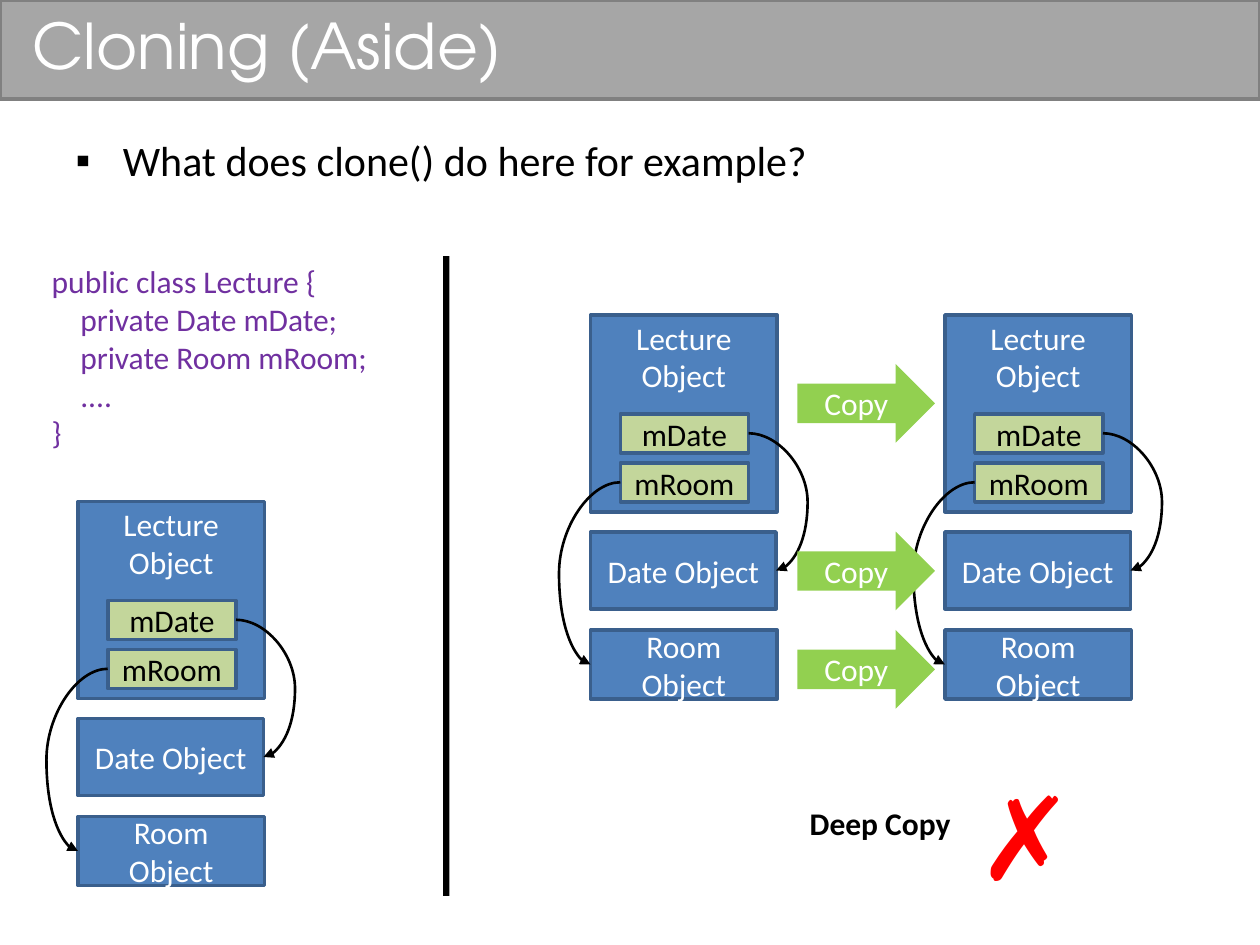
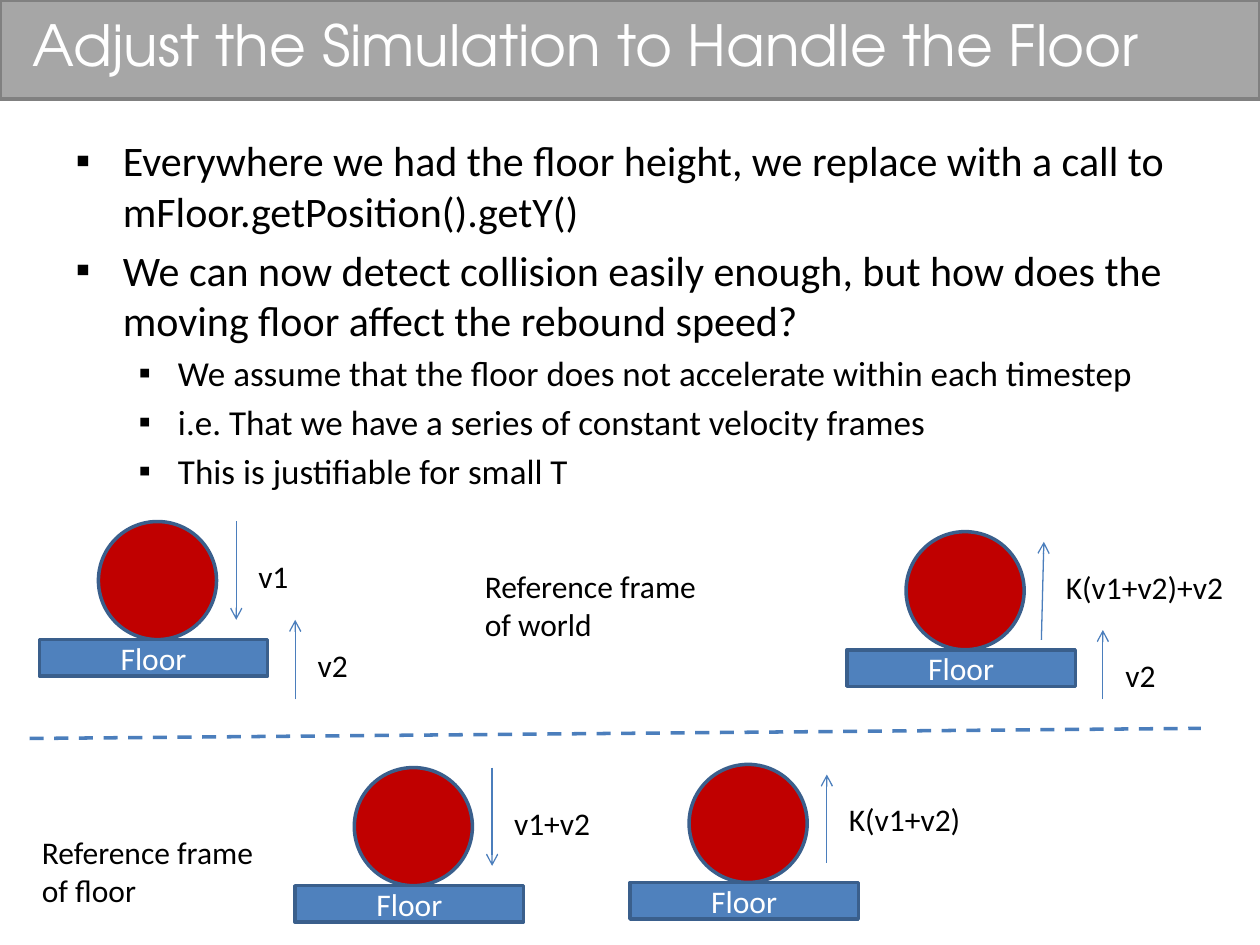
from lxml.etree import SubElement
from pptx import Presentation
from pptx.dml.color import RGBColor
from pptx.enum.dml import MSO_LINE
from pptx.enum.shapes import MSO_CONNECTOR, MSO_SHAPE
from pptx.enum.text import MSO_ANCHOR, MSO_AUTO_SIZE, PP_ALIGN
from pptx.oxml.ns import qn
from pptx.util import Pt

COLOURS = {
    "band": "A6A6A6", "band edge": "808080", "white": "FFFFFF", "black": "000000",
    "object": "4F81BD", "edge": "3A5F8C", "field": "C3D69B", "copy": "92D050",
    "code": "7030A0", "cross": "FF0000", "ball": "C00000", "speed": "4B7EBC",
}
TITLE_FONT = {"name": "TeX Gyre Adventor", "size": Pt(36)}
TEXT_FONT = {"name": "Calibri", "size": Pt(18)}
BULLET_SIZES = (24, 20)
CODE_INDENT = 16.3
CURVE_BULGE = 18


# Shared formatting
def colour(name):
    return RGBColor.from_string(COLOURS[name])


def apply(target, formats):
    for attribute, value in formats.items():
        setattr(target, attribute, value)


def box(left, top, width, height):
    return dict(zip(("left", "top", "width", "height"), map(Pt, (left, top, width, height))))


def style_font(font, ink, formats):
    apply(font, formats)
    font.color.rgb = colour(ink)


# Slide frame: band, title and list
def add_slide(deck, title, bullets, title_size=36):
    slide = deck.slides.add_slide(deck.slide_layouts[1])
    heading, body = slide.placeholders
    apply(heading, box(11.5, 0, 686, 50.4))
    heading.text_frame.text = title
    apply(heading.text_frame, {"auto_size": MSO_AUTO_SIZE.NONE,
                               "vertical_anchor": MSO_ANCHOR.MIDDLE})
    title_line = heading.text_frame.paragraphs[0]
    title_line.alignment = PP_ALIGN.LEFT
    style_font(title_line.runs[0].font, "white", {**TITLE_FONT, "size": Pt(title_size)})

    apply(body, box(36, 73.5, 648, 433.5))
    frame = body.text_frame
    frame.text = "\n".join(text for _, text in bullets)
    frame.auto_size = MSO_AUTO_SIZE.NONE
    for (level, _), item in zip(bullets, frame.paragraphs):
        item.level = level
        style_font(item.runs[0].font, "black",
                   {**TEXT_FONT, "size": Pt(BULLET_SIZES[level])})
        SubElement(item._p.get_or_add_pPr(), qn("a:buChar"), char="▪")
    return slide


def move_band_to_layout(deck, slide):
    band = add_block(slide, (0, 0, 720, 56.5), "band", edge="band edge")
    deck.slide_layouts[1].shapes.element.insert(2, band.element)


# Elements
def add_block(slide, place, fill, text="", kind=MSO_SHAPE.RECTANGLE,
              edge="edge", ink="white", frame_formats=None):
    block = slide.shapes.add_shape(kind, *map(Pt, place))
    block.shadow.inherit = False
    block.fill.solid()
    block.fill.fore_color.rgb = colour(fill)
    if edge:
        block.line.color.rgb = colour(edge)
        block.line.width = Pt(2)
    else:
        block.line.fill.background()
    if text:
        frame = block.text_frame
        frame.text = text
        apply(frame, {"word_wrap": True, "vertical_anchor": MSO_ANCHOR.MIDDLE,
                      **(frame_formats or {})})
        frame.paragraphs[0].alignment = PP_ALIGN.CENTER
        style_font(frame.paragraphs[0].runs[0].font, ink, TEXT_FONT)
    return block


def add_label(slide, place, text, ink="black", **formats):
    frame = slide.shapes.add_textbox(*map(Pt, place)).text_frame
    frame.text = text
    apply(frame, {"word_wrap": False, "auto_size": MSO_AUTO_SIZE.SHAPE_TO_FIT_TEXT})
    for line in frame.paragraphs:
        style_font(line.runs[0].font, ink, {**TEXT_FONT, **formats})
    return frame


def add_line(slide, start, end, ink="speed", width=0.75, head="arrow",
             kind=MSO_CONNECTOR.STRAIGHT):
    connector = slide.shapes.add_connector(kind, *map(Pt, (*start, *end)))
    connector.line.color.rgb = colour(ink)
    connector.line.width = Pt(width)
    if head:
        SubElement(connector.line._get_or_add_ln(), qn("a:tailEnd"), type=head)
    SubElement(connector.element.spPr, qn("a:effectLst"))
    return connector


def add_reference(slide, start, end):
    curve = add_line(slide, start, end, "black", 1.5, "triangle", MSO_CONNECTOR.CURVE)
    span = abs(end[0] - start[0])
    bend = round((span + CURVE_BULGE) / span * 100000)
    guides = curve.element.spPr.find(qn("a:prstGeom")).find(qn("a:avLst"))
    SubElement(guides, qn("a:gd"), name="adj1", fmla=f"val {bend}")


# Cloning: a lecture with its two fields and the objects they refer to
def add_lecture(slide, x, y):
    add_block(slide, (x, y, 106.5, 112.5), "object", "Lecture Object",
              frame_formats={"vertical_anchor": MSO_ANCHOR.TOP, "margin_top": Pt(2)})
    add_block(slide, (x, y + 124, 106, 44), "object", "Date Object")
    add_block(slide, (x, y + 180, 106.5, 39.5), "object", "Room Object")
    for field, offset in (("mDate", 56.5), ("mRoom", 84.5)):
        add_block(slide, (x + 17, y + offset, 73.3, 22.3), "field", field, ink="black")
    add_reference(slide, (x + 90.3, y + 67.6), (x + 106, y + 146))
    add_reference(slide, (x + 17, y + 95.6), (x, y + 199.7))


def build_cloning(deck):
    slide = add_slide(deck, "Cloning (Aside)",
                      [(0, "What does clone() do here for example?")])
    move_band_to_layout(deck, slide)
    code = add_label(slide, (22.5, 146.3, 196.6, 116.6),
                     "public class Lecture {\nprivate Date mDate;\n"
                     "private Room mRoom;\n....\n}", "code")
    for member in code.paragraphs[1:-1]:
        member._p.get_or_add_pPr().set("marL", str(Pt(CODE_INDENT)))

    for x, y in ((44.6, 286.6), (337.5, 180), (540, 180)):
        add_lecture(slide, x, y)
    add_block(slide, (253.2, 146.3, 3.6, 365.7), "black", edge=None)
    add_label(slide, (455.6, 455.6, 95, 29), "Deep Copy", bold=True)
    for y in (208, 303.8, 360):
        add_block(slide, (455.6, y, 78.7, 45), "copy", "Copy",
                  MSO_SHAPE.RIGHT_ARROW, edge=None)
    add_label(slide, (551.5, 433.4, 57, 87), "✗", "cross", size=Pt(66))


# Simulation: a ball on the floor with its speed arrow
def add_ball_on_floor(slide, x, y, speed, label_width, start, end, lean=0):
    add_block(slide, (x + 33.75, y, 67.5, 67.5), "ball", kind=MSO_SHAPE.OVAL)
    add_block(slide, (x, y + 67.5, 130.5, 20.9), "object", "Floor")
    add_line(slide, (x + 112.5 - lean, y + start), (x + 112.5, y + end))
    add_label(slide, (x + 118, y + 17, label_width, 29), speed)


def add_floor_speed(slide, x, y):
    add_line(slide, (x + 146.2, 399.6), (x + 146.2, y + 56.2))
    add_label(slide, (x + 152, y + 67.5, 31.7, 29), "v2")


def build_simulation(deck):
    slide = add_slide(deck, "Adjust the Simulation to Handle the Floor", [
        (0, "Everywhere we had the floor height, we replace with a call to "
            "mFloor.getPosition().getY()"),
        (0, "We can now detect collision easily enough, but how does the "
            "moving floor affect the rebound speed?"),
        (1, "We assume that the floor does not accelerate within each timestep"),
        (1, "i.e. That we have a series of constant velocity frames"),
        (1, "This is justifiable for small T"),
    ], title_size=32.4)

    # World frame above the dashed line, floor frame below it
    before, after = (22.5, 298), (484, 303.8)
    add_ball_on_floor(slide, *before, "v1", 31.7, 0, 56.2)
    add_ball_on_floor(slide, *after, "K(v1+v2)+v2", 105.8, 61.9, 5.8, lean=1.4)
    for scene in (before, after):
        add_floor_speed(slide, *scene)
    add_ball_on_floor(slide, 168.7, 438.6, "v1+v2", 58.3, 0, 56.2)
    add_ball_on_floor(slide, 360, 436.8, "K(v1+v2)", 79.2, 56.2, 5.8)
    add_label(slide, (270, 320.6, 136.8, 51), "Reference frame\nof world")
    add_label(slide, (16.9, 472.5, 136.8, 51), "Reference frame\nof floor")
    divider = add_line(slide, (16.9, 422), (686.2, 416.2), width=2, head=None)
    divider.line.dash_style = MSO_LINE.DASH


def main():
    deck = Presentation()
    apply(deck, {"slide_width": Pt(720), "slide_height": Pt(540)})
    build_cloning(deck)
    build_simulation(deck)
    deck.save("out.pptx")


if __name__ == "__main__":
    main()
